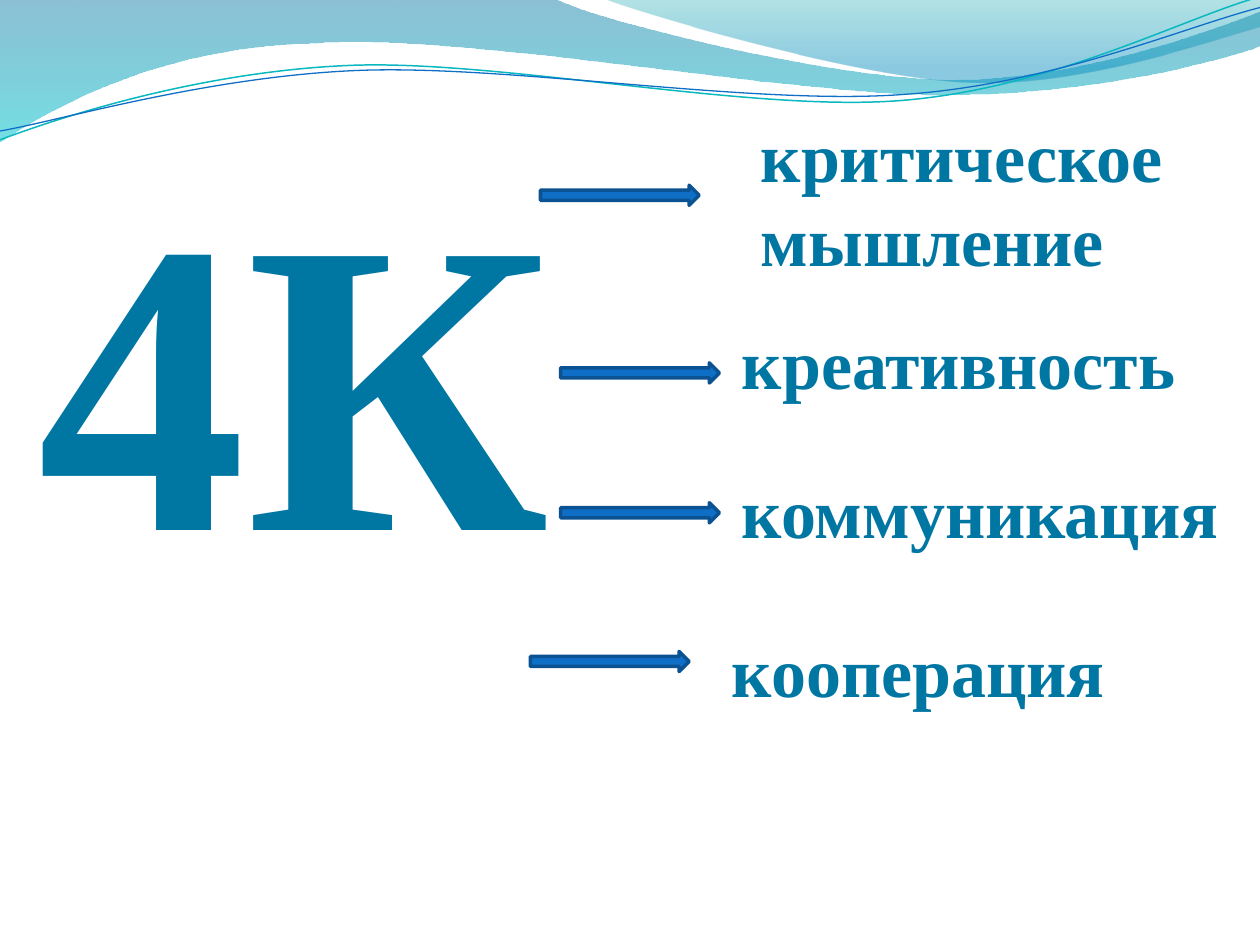
"""Builds a slide that names the four K skills beside a large heading."""
from dataclasses import dataclass

import lxml.etree
import pptx
import pptx.dml.color
import pptx.enum.shapes
import pptx.enum.text
import pptx.oxml
import pptx.oxml.ns
import pptx.util

RGB = pptx.dml.color.RGBColor
INK = RGB(0x00, 0x76, 0xA3)
BLUE = RGB(0x0F, 0x6F, 0xC6)
NAVY = RGB(0x0B, 0x52, 0x92)
TEAL = RGB(0x0A, 0xB8, 0xBF)
SEA = RGB(0x00, 0x74, 0xA1)
AQUA = RGB(0x00, 0xC6, 0xCF)
MINT = RGB(0x00, 0xA1, 0xA9)
SKY = RGB(0x00, 0x8B, 0xBF)
FONT = "Times New Roman"
WIDE, HIGH = 10, 7.5
ARROW = (1.26, 0.16)
Point = tuple[float, float]


@dataclass
class Stop:
    """A gradient stop, with place and opacity in percent."""
    place: int
    color: RGB
    alpha: int


@dataclass
class Wave:
    """A band or line; a two-number leg is straight, a six-number leg is a Bezier curve."""
    start: Point
    legs: list[tuple[float, ...]]
    stops: tuple[Stop, ...] = ()
    color: RGB = BLUE
    width: float = 0


@dataclass
class Skill:
    """A label and its arrow, with places in inches."""
    text: str
    label: tuple[float, float, float, float]
    arrow: Point
    wrap: bool = False


WAVES = [
    Wave((0, 0), [
        (4.4, -0.01), (4.76, 0.17, 6.64, 0.63, 7.58, 0.63),
        (8.53, 0.63, 9.58, 0.26, 10, 0.09), (10.01, 0.36),
        (9.83, 0.44, 8.7, 0.76, 7.46, 0.75), (6.22, 0.75, 3.82, 0.28, 2.57, 0.34),
        (1.29, 0.36, 0.46, 0.83, -0.01, 1.13)],
        (Stop(0, SEA, 45), Stop(100, AQUA, 55))),
    Wave((4.79, -0.01), [
        (5.09, 0.11, 6.82, 0.62, 7.69, 0.65), (8.56, 0.69, 9.61, 0.32, 10, 0.21),
        (10, 0)],
        (Stop(0, MINT, 30), Stop(80, SKY, 45))),
    Wave((0, 1.11), [
        (0.48, 0.93, 1.58, 0.57, 2.77, 0.52), (3.95, 0.47, 5.93, 0.89, 7.13, 0.8),
        (8.33, 0.71, 9.38, 0.15, 9.98, -0.02)], color=TEAL, width=0.85),
    Wave((0, 1.04), [
        (0.47, 0.96, 1.64, 0.61, 2.83, 0.56), (4.03, 0.51, 5.97, 0.84, 7.17, 0.75),
        (8.36, 0.67, 9.41, 0.21, 10, 0.06)], width=0.75),
]
SKILLS = [
    Skill("критическое\nмышление", (5.94, 0.84, 3.56, 1.45), (4.29, 1.47)),
    Skill("креативность", (5.79, 2.49, 3.7, 0.77), (4.45, 2.88), True),
    Skill("коммуникация", (5.79, 3.67, 4.02, 0.77), (4.45, 3.99)),
    Skill("кооперация", (5.71, 4.93, 3.19, 0.77), (4.21, 5.17)),
]


def bend(shape, legs: list[tuple[float, ...]]) -> None:
    """Turn the straight legs of a freeform into curves where a leg has handles."""
    tag = pptx.oxml.ns.qn
    lines = list(shape._element.iter(tag("a:lnTo")))
    for line, leg in zip(lines, legs):
        if len(leg) == 2:
            continue
        curve = lxml.etree.Element(tag("a:cubicBezTo"))
        for x, y in zip(leg[::2], leg[1::2]):
            spot = lxml.etree.SubElement(curve, tag("a:pt"))
            spot.set("x", str(pptx.util.Inches(x) - shape.left))
            spot.set("y", str(pptx.util.Inches(y) - shape.top))
        line.getparent().replace(line, curve)


def shade(shape, stops: tuple[Stop, ...]) -> None:
    """Fill a shape with a see-through gradient from top to bottom."""
    shape.fill.gradient()
    grad = shape.fill._xPr.find(pptx.oxml.ns.qn("a:gradFill"))
    for child in list(grad):
        grad.remove(child)
    rows = "".join(
        f'<a:gs pos="{s.place * 1000}"><a:srgbClr val="{s.color}">'
        f'<a:alpha val="{s.alpha * 1000}"/></a:srgbClr></a:gs>' for s in stops)
    space = pptx.oxml.ns.nsdecls("a")
    grad.append(pptx.oxml.parse_xml(f"<a:gsLst {space}>{rows}</a:gsLst>"))
    lin = lxml.etree.SubElement(grad, pptx.oxml.ns.qn("a:lin"))
    lin.set("ang", "5400000")
    lin.set("scaled", "0")


def draw_wave(slide, wave: Wave) -> None:
    """Draw one band or line of the top border."""
    unit = pptx.util.Inches
    pen = slide.shapes.build_freeform(*map(unit, wave.start))
    ends = [tuple(map(unit, leg[-2:])) for leg in wave.legs]
    pen.add_line_segments(ends, close=bool(wave.stops))
    shape = pen.convert_to_shape()
    bend(shape, wave.legs)
    shape.shadow.inherit = False
    if wave.stops:
        shade(shape, wave.stops)
        shape.line.fill.background()
    else:
        shape.fill.background()
        shape.line.color.rgb = wave.color
        shape.line.width = pptx.util.Pt(wave.width)


def draw_text(slide, text: str, box: tuple[float, ...], size: float, wrap: bool) -> None:
    """Draw bold text in a box, one paragraph a line."""
    frame = slide.shapes.add_textbox(*map(pptx.util.Inches, box)).text_frame
    frame.word_wrap = wrap
    frame.auto_size = pptx.enum.text.MSO_AUTO_SIZE.SHAPE_TO_FIT_TEXT
    frame.text = text
    for para in frame.paragraphs:
        para.font.name = FONT
        para.font.size = pptx.util.Pt(size)
        para.font.bold = True
        para.font.color.rgb = INK


def draw_arrow(slide, spot: Point) -> None:
    """Draw a block arrow that points right."""
    box = map(pptx.util.Inches, (*spot, *ARROW))
    shape = slide.shapes.add_shape(pptx.enum.shapes.MSO_SHAPE.RIGHT_ARROW, *box)
    shape.shadow.inherit = False
    shape.fill.solid()
    shape.fill.fore_color.rgb = BLUE
    shape.line.color.rgb = NAVY
    shape.line.width = pptx.util.Pt(2)


def main() -> None:
    """Build and save the slide."""
    deck = pptx.Presentation()
    deck.slide_width = pptx.util.Inches(WIDE)
    deck.slide_height = pptx.util.Inches(HIGH)
    slide = deck.slides.add_slide(deck.slide_layouts[6])
    for wave in WAVES:
        draw_wave(slide, wave)
    draw_text(slide, "4К", (0.2, 0.84, 4.72, 4.73), 239, True)
    for skill in SKILLS:
        draw_arrow(slide, skill.arrow)
        draw_text(slide, skill.text, skill.label, 40, skill.wrap)
    deck.save("out.pptx")


if __name__ == "__main__":
    main()
